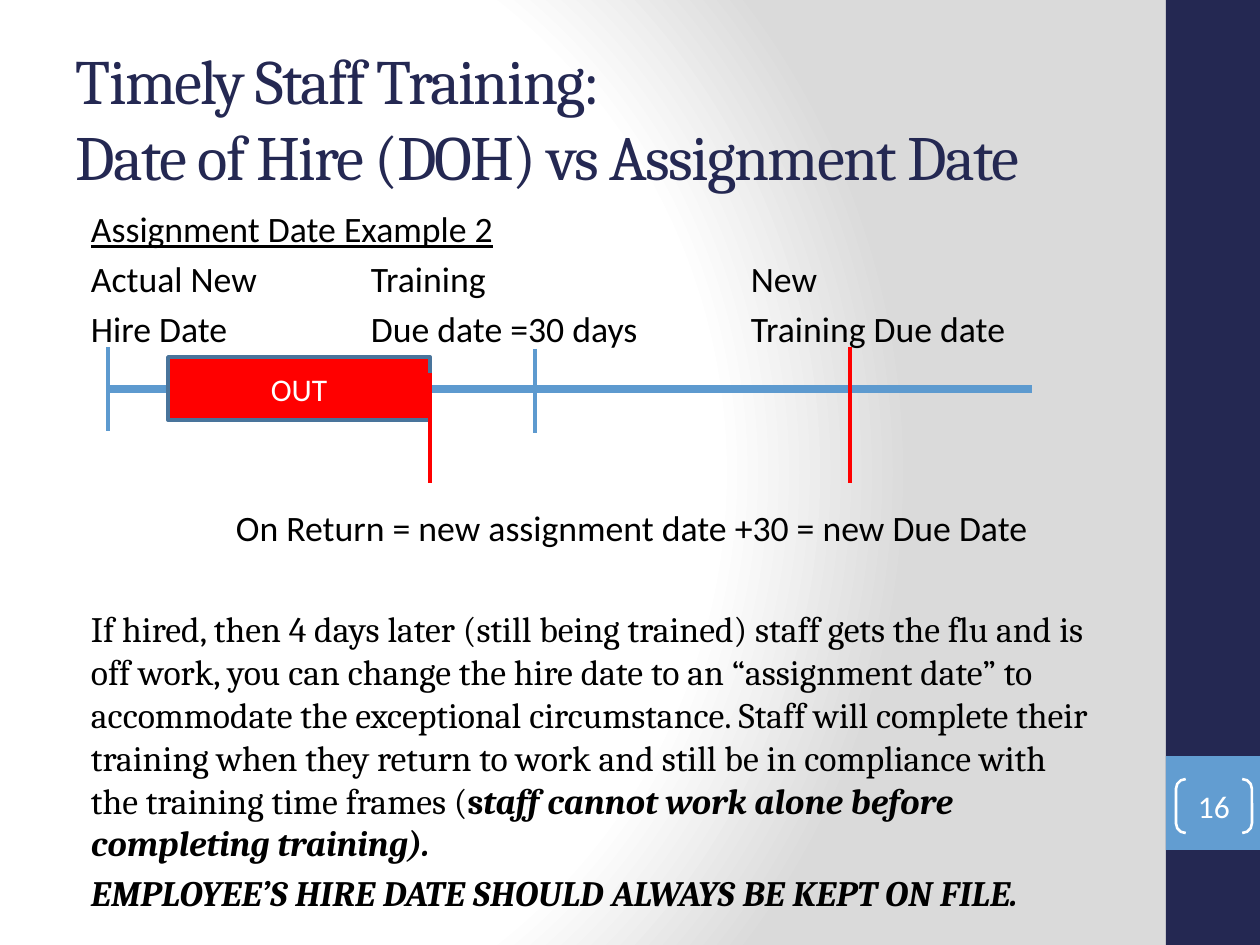
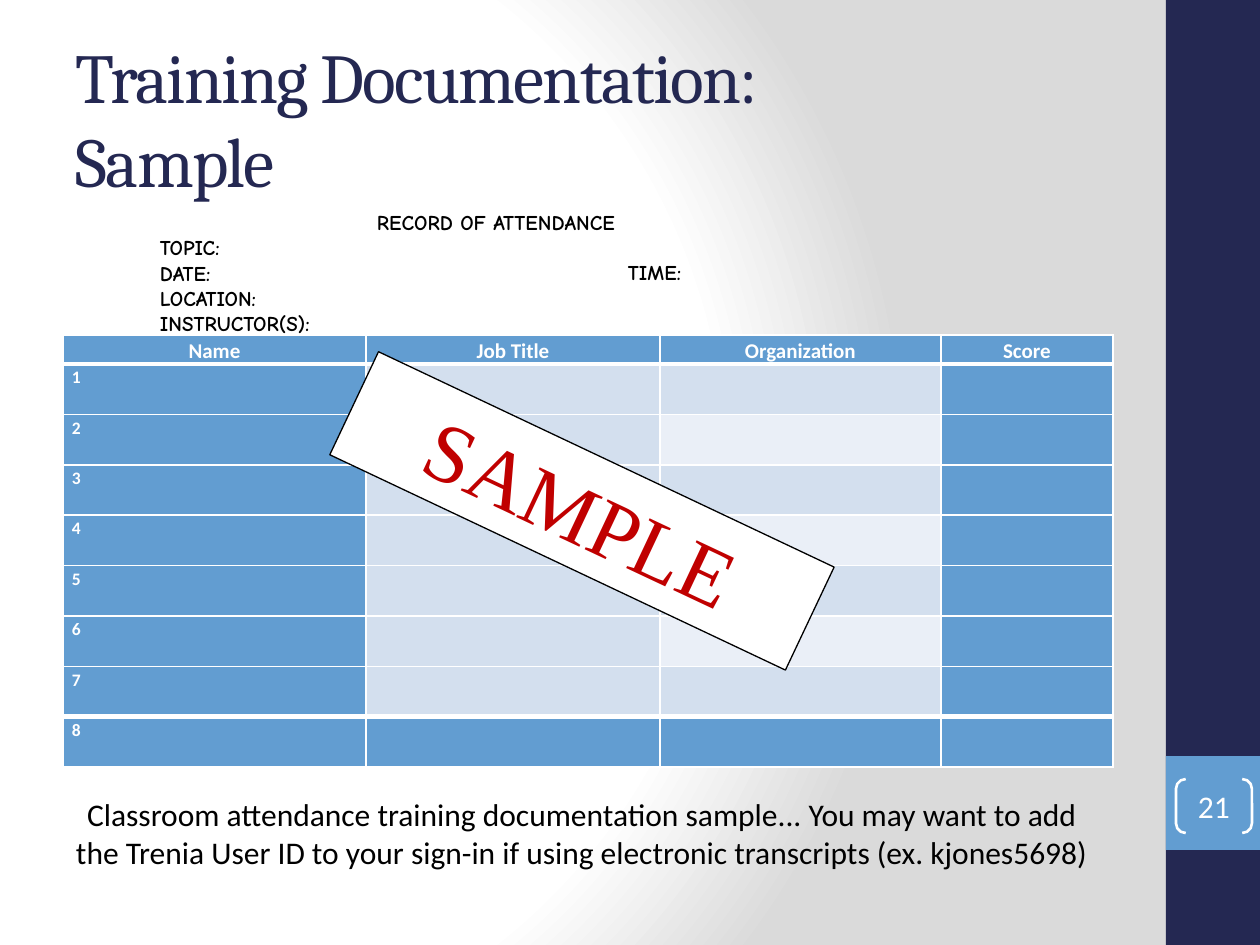
from lxml import etree
from pptx import Presentation
from pptx import util as u
from pptx.dml.color import RGBColor
from pptx.enum import shapes, text
from pptx.oxml import parse_xml
from pptx.oxml.ns import nsdecls, qn

PX = 914400 / 126
NAVY = RGBColor(0x24, 0x28, 0x52)
BLUE = RGBColor(0x62, 0x9D, 0xD1)
LINE_BLUE = RGBColor(0x5D, 0x9A, 0xCF)
EDGE_BLUE = RGBColor(0x49, 0x74, 0x9B)
PALE = RGBColor(0xD3, 0xDF, 0xEE)
PALER = RGBColor(0xEA, 0xEF, 0xF7)
GREY = RGBColor(0xDA, 0xDA, 0xDA)
WHITE = RGBColor(0xFF, 0xFF, 0xFF)
BLACK = RGBColor(0, 0, 0)
RED = RGBColor(0xFF, 0, 0)
DARK_RED = RGBColor(0xC0, 0, 0)
BODY_PT = 20.4
CENTER = text.PP_ALIGN.CENTER


def px(n):
    return u.Emu(round(n * PX))


def box(*lengths):
    return [px(n) for n in lengths]


def style(runs, font, size, color, bold=None, italic=None, underline=None):
    for r in runs:
        f = r.font
        f.name, f.size, f.color.rgb = font, u.Pt(size), color
        f.bold, f.italic, f.underline = bold, italic, underline


def set_insets(frame, x, y):
    frame.margin_left = frame.margin_right = px(x)
    frame.margin_top = frame.margin_bottom = px(y)


def add_text(s, at, lines, font, size, color=BLACK, align=None, gap=0, **look):
    tf = s.shapes.add_textbox(*box(*at)).text_frame
    tf.word_wrap = True
    set_insets(tf, 0, 0)
    tf.text = "\n".join(lines)
    for i, p in enumerate(tf.paragraphs):
        p.alignment = align
        p.space_before = u.Pt(gap if i else 0)
        style(p.runs, font, size, color, **look)
    return tf


def add_block(s, at, kind=shapes.MSO_SHAPE.RECTANGLE, fill=None, line=None, weight=1):
    sp = s.shapes.add_shape(kind, *box(*at))
    sp.shadow.inherit = False
    if fill is None:
        sp.fill.background()
    else:
        sp.fill.solid()
        sp.fill.fore_color.rgb = fill
    if line is None:
        sp.line.fill.background()
    else:
        sp.line.color.rgb = line
        sp.line.width = u.Pt(weight)
    return sp


def label(sp, words, font, size, color):
    tf = sp.text_frame
    set_insets(tf, 0, 0)
    tf.vertical_anchor = text.MSO_ANCHOR.MIDDLE
    p = tf.paragraphs[0]
    p.text = words
    p.alignment = CENTER
    style(p.runs, font, size, color)


def add_line(s, start, end, color, weight):
    cn = s.shapes.add_connector(shapes.MSO_CONNECTOR.STRAIGHT, *box(*start, *end))
    cn.line.color.rgb = color
    cn.line.width = u.Pt(weight)
    etree.SubElement(cn._element.spPr, qn("a:effectLst"))


def set_background(master):
    master.background.fill.solid()
    bg = master.element.find(".//" + qn("p:bgPr"))
    stops = "".join(
        f'<a:gs pos="{pos}000"><a:srgbClr val="{color}"/></a:gs>'
        for pos, color in ((0, WHITE), (75, WHITE), (100, GREY)))
    bg.replace(bg[0], parse_xml(
        f'<a:gradFill {nsdecls("a")} rotWithShape="1"><a:gsLst>{stops}</a:gsLst>'
        '<a:path path="circle"><a:fillToRect l="20000" t="50000" r="100000" b="50000"/>'
        '</a:path></a:gradFill>'))


def add_slide(prs, title, size, number):
    s = prs.slides.add_slide(prs.slide_layouts[6])
    add_block(s, (1166, 0, 94, 945), fill=NAVY)
    add_block(s, (1166, 756, 94, 94), fill=BLUE)
    tf = add_text(s, (76, 38, 1030, 158), [], "Cambria", size)
    tf.vertical_anchor = text.MSO_ANCHOR.MIDDLE
    p = tf.paragraphs[0]
    p.text = title
    style(p.runs, "Cambria", size, NAVY)
    for r in p.runs:
        r.font._element.set("spc", "-100")
    page = add_block(s, (1176, 779, 76, 54), shapes.MSO_SHAPE.DOUBLE_BRACKET,
                     line=WHITE, weight=1.5)
    page.adjustments[0] = 0.18
    label(page, number, "Calibri", 18, WHITE)
    return s


def set_borders(cell, top=1, bottom=1):
    tcPr = cell._tc.get_or_add_tcPr()
    for side, weight in (("L", 1), ("R", 1), ("T", top), ("B", bottom)):
        tcPr.append(parse_xml(
            f'<a:ln{side} {nsdecls("a")} w="{u.Pt(weight)}"><a:solidFill>'
            f'<a:srgbClr val="{WHITE}"/></a:solidFill></a:ln{side}>'))


def fill_cell(cell, words, size, fill, align=None, **borders):
    set_borders(cell, **borders)
    cell.fill.solid()
    cell.fill.fore_color.rgb = fill
    set_insets(cell, 9, 0)
    p = cell.text_frame.paragraphs[0]
    p.text = words
    p.alignment = align
    p.line_spacing = 1.15
    style(p.runs, "Calibri", size, WHITE, bold=True)


def add_attendance_table(s, at, headings, widths, entries):
    header_height, row_height = 29, 50.4
    height = header_height + entries * row_height
    t = s.shapes.add_table(entries + 1, len(headings), *box(*at, sum(widths), height)).table
    for column, width in zip(t.columns, widths):
        column.width = px(width)
    for i, row in enumerate(t.rows):
        row.height = px(row_height if i else header_height)
    for c, heading in enumerate(headings):
        fill_cell(t.cell(0, c), heading, 12, BLUE, CENTER, bottom=3)
        for n in range(1, entries + 1):
            last = n == entries
            if last or c in (0, 3):
                fill = BLUE
            else:
                fill = PALER if c == 2 and n % 2 == 0 else PALE
            fill_cell(t.cell(n, c), "" if c else str(n), 10, fill,
                      top=3 if n == 1 or last else 1,
                      bottom=3 if n == entries - 1 else 1)


def add_timeline(s):
    axis = 389
    add_line(s, (107, axis), (1032, axis), LINE_BLUE, 4.5)
    for x, top in ((108, 347), (535, 349)):
        add_line(s, (x, top), (x, top + 84), LINE_BLUE, 2.25)
    out = add_block(s, (168, 357, 262, 63), fill=RED, line=EDGE_BLUE, weight=2)
    label(out, "OUT", "Calibri", 18, WHITE)
    for x, top in ((850, 347), (430, 373)):
        add_line(s, (x, top), (x, 483), RED, 2.25)


def build_timeline_slide(prs):
    s = add_slide(prs, "Timely Staff Training:\nDate of Hire (DOH) vs Assignment Date", 36, "16")
    add_text(s, (91, 207, 500, 44), ["Assignment Date Example 2"], "Calibri", BODY_PT,
             underline=True)
    for x, lines in ((91, ["Actual New", "Hire Date"]),
                     (371, ["Training", "Due date =30 days"]),
                     (751, ["New", "Training Due date"])):
        add_text(s, (x, 257, 300, 94), lines, "Calibri", BODY_PT, gap=4)
    add_text(s, (236, 506, 860, 44), ["On Return = new assignment date +30 = new Due Date"],
             "Calibri", BODY_PT)
    story = (
        "If hired, then 4 days later (still being trained) staff gets the flu and is off work, "
        "you can change the hire date to an “assignment date” to accommodate the exceptional "
        "circumstance. Staff will complete their training when they return to work and still "
        "be in compliance with the training time frames (")
    tf = add_text(s, (91, 607, 1009, 308),
                  [story, "EMPLOYEE’S HIRE DATE SHOULD ALWAYS BE KEPT ON FILE."],
                  "Cambria", BODY_PT, gap=4)
    p, closing = tf.paragraphs
    style(closing.runs, "Cambria", BODY_PT, BLACK, bold=True, italic=True)
    for words, italic in (("s", None),
                          ("taff cannot work alone before completing training).", True)):
        r = p.add_run()
        r.text = words
        style([r], "Cambria", BODY_PT, BLACK, bold=True, italic=italic)
    add_timeline(s)


def build_sample_slide(prs):
    s = add_slide(prs, "Training Documentation:\nSample", 40, "21")
    add_attendance_table(s, (63, 335), ["Name", "Job Title", "Organization", "Score"],
                         [303, 294, 281, 172], 8)
    stamp = add_block(s, (330, 454, 504, 114), fill=WHITE, line=BLACK, weight=0.75)
    stamp.rotation = 25.3
    label(stamp, "SAMPLE", "Times New Roman", 48, DARK_RED)
    form = ("Comic Neue", 12)
    add_text(s, (160, 210, 672, 25), ["RECORD OF ATTENDANCE"], *form, align=CENTER, bold=True)
    add_text(s, (160, 235, 400, 101), ["TOPIC:", "DATE:", "LOCATION:", "INSTRUCTOR(S):"],
             *form, bold=True)
    add_text(s, (628, 260, 200, 25), ["TIME:"], *form, bold=True)
    add_text(s, (66, 795, 1032, 78),
             ["Classroom attendance training documentation sample... You may want to add the "
              "Trenia User ID to your sign-in if using electronic transcripts (ex. kjones5698)"],
             "Calibri", 18, align=CENTER)


def main():
    prs = Presentation()
    prs.slide_width, prs.slide_height = box(1260, 945)
    set_background(prs.slide_master)
    build_timeline_slide(prs)
    build_sample_slide(prs)
    prs.save("out.pptx")


if __name__ == "__main__":
    main()
